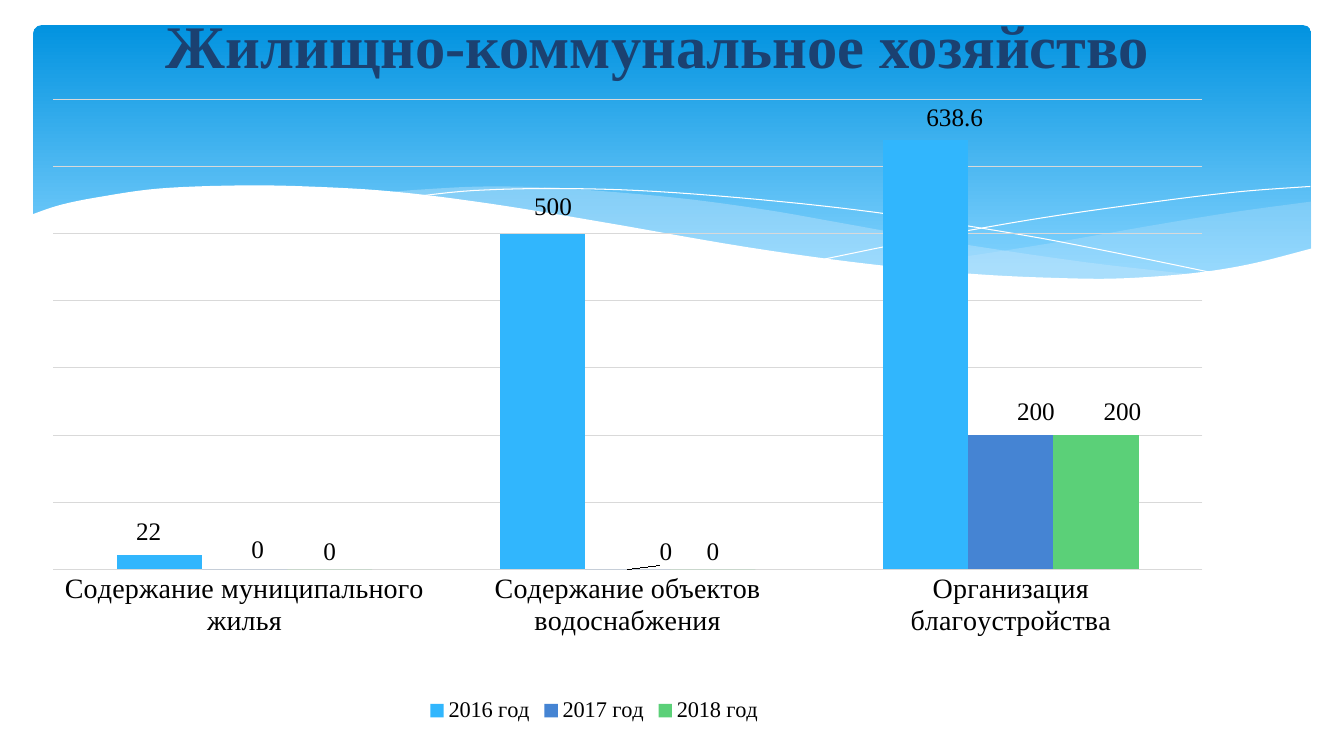
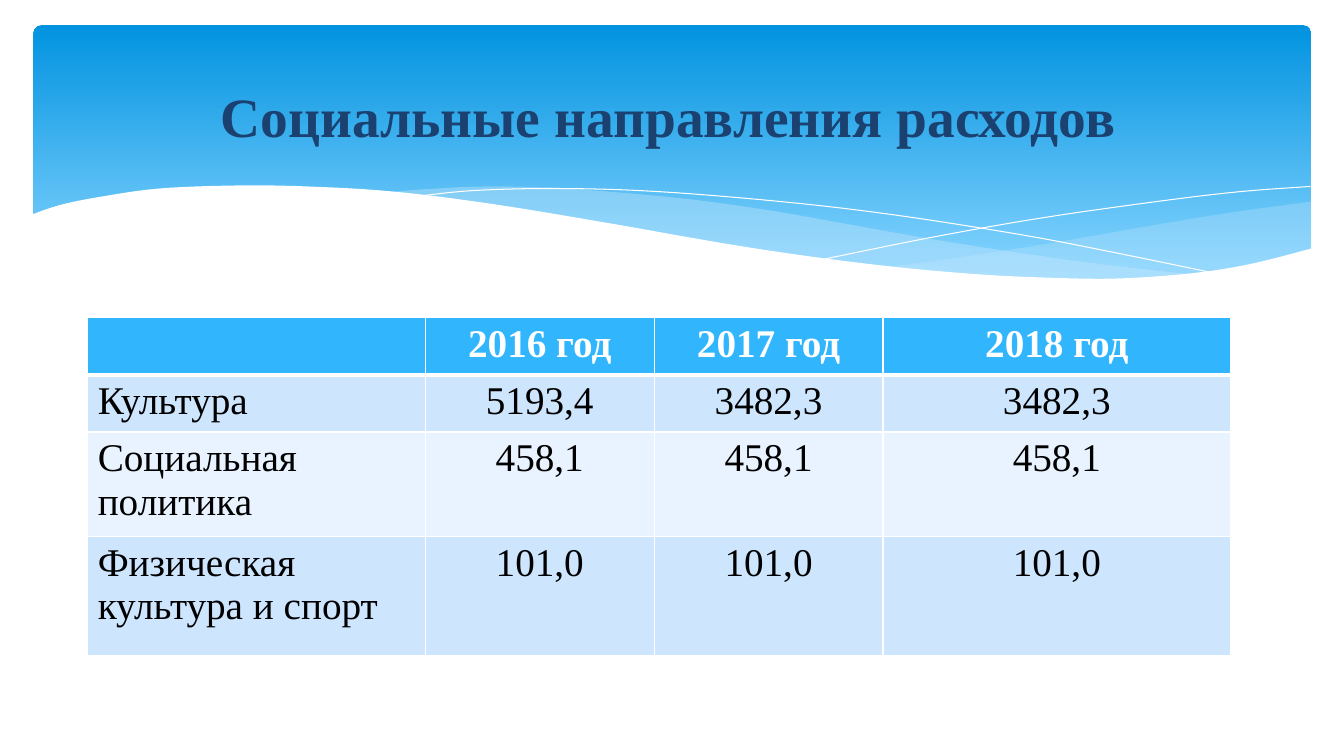
"""Build two budget slides: housing spending as a chart and social spending as a table."""
from dataclasses import dataclass
from typing import Any, NamedTuple

from lxml.etree import SubElement
from pptx import Presentation
from pptx.chart.data import CategoryChartData as ChartData
from pptx.dml.color import RGBColor as Rgb
from pptx.enum.chart import XL_CHART_TYPE as Kind
from pptx.enum.chart import XL_LABEL_POSITION as Spot
from pptx.enum.chart import XL_LEGEND_POSITION as Side
from pptx.enum.chart import XL_TICK_MARK as Tick
from pptx.enum.shapes import MSO_SHAPE as Form
from pptx.enum.text import MSO_ANCHOR as Anchor
from pptx.enum.text import PP_ALIGN as Align
from pptx.oxml.ns import qn
from pptx.util import Inches, Pt

COLS, ROWS = 40, 22.5
UNIT = Inches(13.33) / COLS
Point = tuple[float, float]


@dataclass(frozen=True)
class Theme:
    face: str = "Times New Roman"
    base: str = "Cabin"
    title: str = "1B4171"
    ink: str = "000000"
    white: str = "FFFFFF"
    sky: str = "0293E0"
    haze: str = "83D3FE"
    foam: str = "C6E7FC"
    grid: str = "D9D9D9"
    head: str = "31B6FD"
    bands: tuple[str, ...] = ("CEE5FE", "E8F3FF")
    bars: tuple[str, ...] = ("31B6FD", "4584D3", "5BD078")
    small: float = 10
    key: float = 16
    label: float = 18
    axis: float = 20
    cell: float = 28


class Box(NamedTuple):
    left: float
    top: float
    width: float
    height: float


class Wave(NamedTuple):
    curves: tuple[tuple[Point, ...], ...]
    fill: str = ""
    alpha: int = 100


class Title(NamedTuple):
    text: str
    box: Box
    size: float
    align: Any


class Series(NamedTuple):
    name: str
    values: tuple[float, ...]
    shifts: tuple[Point, ...]


THEME = Theme()
YEARS = ("2016 год", "2017 год", "2018 год")
WAVES = (
    Wave((
        ((39.03, 6), (36.81, 6.3), (34.41, 6.69), (31.14, 7.26), (28.23, 7.71), (26.46, 7.95)),
        ((26.46, 7.95), (28.2, 8.13), (30.27, 8.28), (32.55, 8.34), (34.89, 8.22),
         (36.84, 7.95), (39.03, 7.41)),
    ), THEME.foam, 29),
    Wave((
        ((35.7, 8.19), (32.28, 7.8), (28.23, 7.2), (25.17, 6.66), (22.77, 6.24),
         (20.07, 5.88), (16.8, 5.61), (14.46, 5.55), (12.54, 5.64), (11.46, 5.73)),
        ((11.46, 5.73), (14.49, 6.09), (17.97, 6.66), (21.18, 7.2), (24.72, 7.74),
         (27.78, 8.1), (30.42, 8.31), (32.7, 8.34), (34.29, 8.31), (35.7, 8.19)),
    ), THEME.foam, 40),
    Wave((
        ((12.36, 5.85), (14.1, 5.67), (16.65, 5.61), (19.56, 5.7), (23.25, 6),
         (26.58, 6.39), (30.42, 6.99), (33.24, 7.53), (36.3, 8.16)),
    )),
    Wave((
        ((24.54, 7.71), (27.81, 7.05), (31.05, 6.48), (34.65, 5.97), (36.96, 5.7), (39, 5.55)),
    )),
    Wave((
        ((39.09, 7.38), (37.2, 7.86), (35.49, 8.13), (33.48, 8.28), (31.74, 8.28),
         (29.07, 8.16), (25.89, 7.86), (22.2, 7.35), (17.88, 6.6), (14.58, 6.06),
         (11.7, 5.7), (9.18, 5.55), (7.05, 5.52), (4.74, 5.61), (3.03, 5.85),
         (1.83, 6.09), (0.93, 6.39)),
        ((0.93, 9.87), (39.09, 9.87)),
    ), THEME.white),
)
HOUSING = Title("Жилищно-коммунальное хозяйство", Box(0, 0, 34.5, 2.64), 43.2, Align.RIGHT)
SOCIAL = Title("Социальные направления расходов", Box(2.88, 2.19, 34, 2.46), 39.6, Align.CENTER)
WORKS = ("Содержание муниципального жилья", "Содержание объектов водоснабжения",
         "Организация благоустройства")
SPENDING = (
    Series(YEARS[0], (22, 500, 638.6), ((-0.8, -0.8), (0.8, -1.4), (2.2, -0.7))),
    Series(YEARS[1], (0, 0, 200), ((1, -0.3), (2.9, 0), (1.9, -0.9))),
    Series(YEARS[2], (0, 0, 200), ((0, 0), (0, 0), (2, -0.8))),
)
CELLS = (
    ("", *YEARS),
    ("Культура", "5193,4", "3482,3", "3482,3"),
    ("Социальная политика", "458,1", "458,1", "458,1"),
    ("Физическая культура и спорт", "101,0", "101,0", "101,0"),
)
WIDTHS = (10.05, 6.81, 6.81, 10.35)
HEIGHTS = (1.44, 1.5, 2.64, 3.54)


def emu(units: float) -> int:
    """Turn grid units into EMU."""
    return round(units * UNIT)


def frame(box: Box) -> tuple[int, ...]:
    """Turn a grid box into EMU lengths."""
    return tuple(emu(side) for side in box)


def style(font: Any, size: float, color: str, face: str = THEME.face, bold: bool = False) -> None:
    """Set the face, size, colour and weight of a font."""
    font.name, font.size, font.bold = face, Pt(size), bold
    font.color.rgb = Rgb.from_string(color)


def paint(shape: Any, color: str) -> None:
    """Give a fill one plain colour."""
    shape.fill.solid()
    shape.fill.fore_color.rgb = Rgb.from_string(color)


def bend(knots: tuple[Point, ...], steps: int = 6) -> list[Point]:
    """Draw a smooth Catmull-Rom curve through the knots."""
    ends = (knots[0], *knots, knots[-1])
    curve = [knots[0]]
    for a, b, c, d in zip(ends, ends[1:], ends[2:], ends[3:]):
        for step in range(1, steps + 1):
            t = step / steps
            curve.append(tuple(
                (2 * q + (r - p) * t + (2 * p - 5 * q + 4 * r - s) * t ** 2
                 + (3 * q - p - 3 * r + s) * t ** 3) / 2
                for p, q, r, s in zip(a, b, c, d)))
    return curve


def add_wave(slide: Any, wave: Wave) -> None:
    """Draw a filled wave, or a white hairline when it has no fill."""
    dots = [(emu(x), emu(y)) for curve in wave.curves for x, y in bend(curve)]
    pen = slide.shapes.build_freeform(*dots[0])
    pen.add_line_segments(dots[1:], close=bool(wave.fill))
    shape = pen.convert_to_shape()
    shape.shadow.inherit = False
    if not wave.fill:
        shape.fill.background()
        shape.line.color.rgb = Rgb.from_string(THEME.white)
        shape.line.width = 0
        return
    paint(shape, wave.fill)
    shape.line.fill.background()
    if wave.alpha < 100:
        tint = shape._element.spPr.find(".//" + qn("a:srgbClr"))
        SubElement(tint, qn("a:alpha"), val=str(wave.alpha * 1000))


def add_banner(slide: Any) -> None:
    """Draw the blue banner and its waves."""
    panel = slide.shapes.add_shape(Form.ROUNDED_RECTANGLE, *frame(Box(0.99, 0.75, 38.04, 8.1)))
    panel.adjustments[0] = 0.03
    panel.shadow.inherit = False
    panel.line.fill.background()
    panel.fill.gradient()
    panel.fill.gradient_angle = 270
    for stop, color, place in zip(panel.fill.gradient_stops, (THEME.sky, THEME.haze), (0, 0.9)):
        stop.color.rgb = Rgb.from_string(color)
        stop.position = place
    for wave in WAVES:
        add_wave(slide, wave)


def add_title(slide: Any, title: Title) -> None:
    """Write the slide title."""
    text = slide.shapes.add_textbox(*frame(title.box)).text_frame
    text.word_wrap, text.vertical_anchor = True, Anchor.MIDDLE
    line = text.paragraphs[0]
    line.text, line.alignment = title.text, title.align
    style(line.font, title.size, THEME.title, bold=True)


def lay_out(owner: Any, index: int, **parts: Any) -> None:
    """Insert a manual layout into a chart part."""
    for old in owner.findall(qn("c:layout")):
        owner.remove(old)
    layout = SubElement(owner, qn("c:layout"))
    manual = SubElement(layout, qn("c:manualLayout"))
    for name, value in parts.items():
        SubElement(manual, qn(f"c:{name}"), val=str(value))
    owner.insert(index, layout)


def add_labels(bars: Any, shifts: tuple[Point, ...]) -> None:
    """Show the values of a series, moved by percentages of the chart."""
    bars.data_labels.show_value = True
    style(bars.data_labels.font, THEME.label, THEME.ink)
    for index in range(len(shifts)):
        label = bars.points[index].data_label
        style(label.font, THEME.label, THEME.ink)
        label.position = Spot.OUTSIDE_END
    for node, (x, y) in zip(bars._element.iter(qn("c:dLbl")), shifts):
        lay_out(node, 1, x=x / 100, y=y / 100)


def add_bars(slide: Any) -> None:
    """Draw the chart of housing spending."""
    data = ChartData()
    data.categories = WORKS
    for series in SPENDING:
        data.add_series(series.name, series.values)
    box = Box(0, 2.37, 39.33, 19.44)
    chart = slide.shapes.add_chart(Kind.COLUMN_CLUSTERED, *frame(box), data).chart
    style(chart.font, THEME.small, THEME.ink, THEME.base)
    chart.has_title = False
    chart.has_legend = True
    chart.legend.position = Side.BOTTOM
    chart.legend.include_in_layout = False
    style(chart.legend.font, THEME.key, THEME.ink)
    lay_out(chart.legend._element, 1, xMode="edge", yMode="edge", x=0.32, y=0.94)
    works, scale = chart.category_axis, chart.value_axis
    works.major_tick_mark = works.minor_tick_mark = Tick.NONE
    works.format.line.fill.background()
    style(works.tick_labels.font, THEME.axis, THEME.ink)
    scale.visible = False
    scale.minimum_scale, scale.maximum_scale, scale.major_unit = 0, 700, 100
    scale.has_major_gridlines = True
    rule = scale.major_gridlines.format.line
    rule.color.rgb, rule.width = Rgb.from_string(THEME.grid), Pt(0.75)
    plot = chart.plots[0]
    plot.gap_width, plot.overlap, plot.vary_by_categories = 150, 0, False
    for bars, series, color in zip(plot.series, SPENDING, THEME.bars):
        paint(bars.format, color)
        bars.invert_if_negative = False
        add_labels(bars, series.shifts)
    area = chart._chartSpace.find(".//" + qn("c:plotArea"))
    lay_out(area, 0, layoutTarget="inner", xMode="edge", yMode="edge",
            x=0.04, y=0.03, w=0.87, h=0.72)


def edge(cell: Any, row: int) -> None:
    """Draw white borders, thick between the head and the body."""
    thick = {"T": row == 1, "B": row == 0}
    for side in "LRTB":
        width = Pt(3 if thick.get(side) else 1)
        line = SubElement(cell._tc.get_or_add_tcPr(), qn(f"a:ln{side}"), w=str(width))
        SubElement(SubElement(line, qn("a:solidFill")), qn("a:srgbClr"), val=THEME.white)


def add_grid(slide: Any) -> None:
    """Draw the table of social spending."""
    box = Box(2.61, 9.45, sum(WIDTHS), sum(HEIGHTS))
    table = slide.shapes.add_table(len(CELLS), len(WIDTHS), *frame(box)).table
    table.horz_banding = False
    for column, width in zip(table.columns, WIDTHS):
        column.width = emu(width)
    for row, (texts, height) in enumerate(zip(CELLS, HEIGHTS)):
        table.rows[row].height = emu(height)
        head = row == 0
        for col, text in enumerate(texts):
            cell = table.cell(row, col)
            edge(cell, row)
            paint(cell, THEME.head if head else THEME.bands[(row - 1) % 2])
            line = cell.text_frame.paragraphs[0]
            line.text, line.alignment = text, Align.CENTER if col else Align.LEFT
            style(line.font, THEME.cell, THEME.white if head else THEME.ink, bold=head)


def main() -> None:
    """Build and save the slides."""
    deck = Presentation()
    deck.slide_width, deck.slide_height = emu(COLS), emu(ROWS)
    for title, draw in ((HOUSING, add_bars), (SOCIAL, add_grid)):
        slide = deck.slides.add_slide(deck.slide_layouts[6])
        add_banner(slide)
        add_title(slide, title)
        draw(slide)
    deck.save("out.pptx")


if __name__ == "__main__":
    main()
